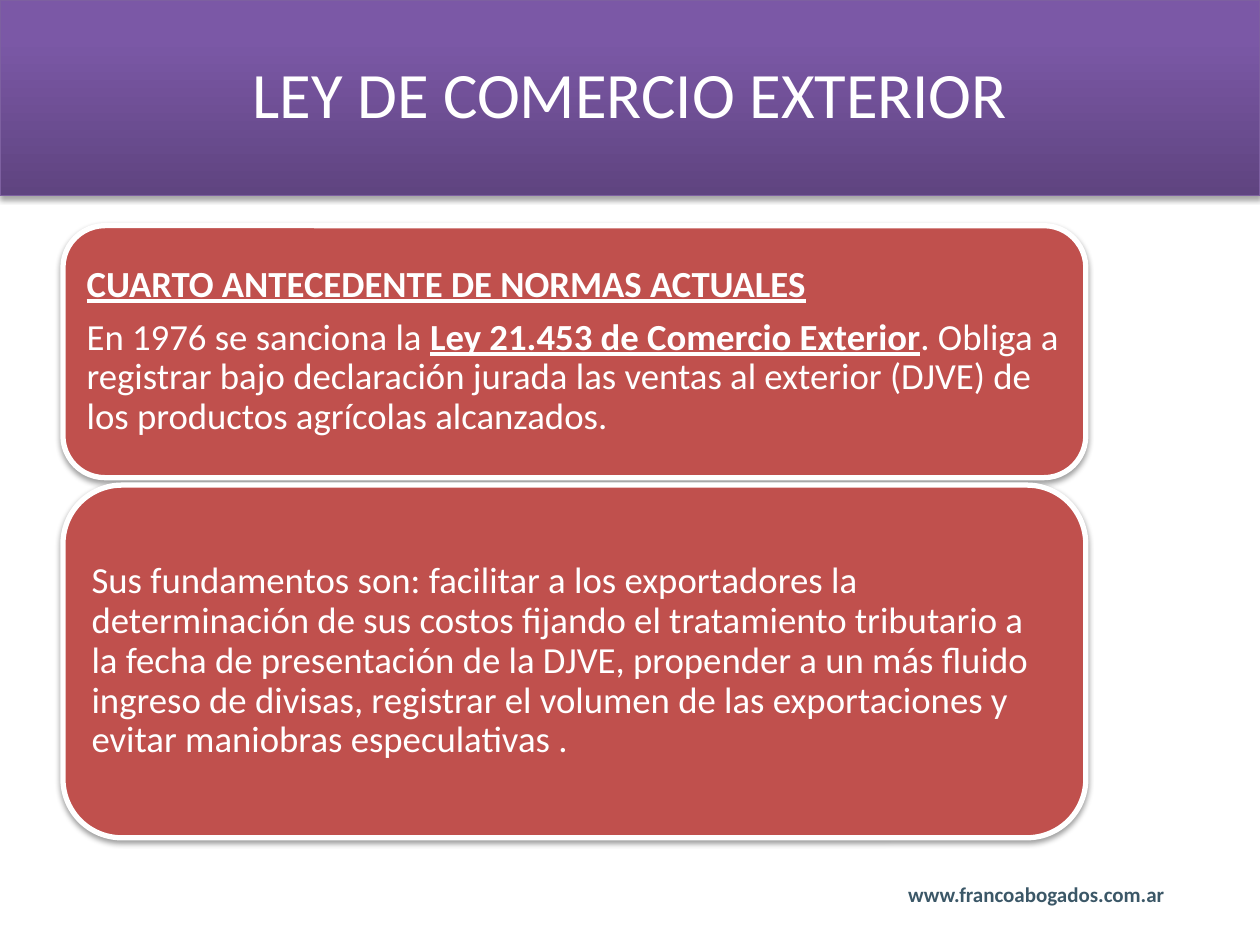
from copy import deepcopy
from dataclasses import dataclass

from lxml import etree
from pptx import Presentation
from pptx.dml.color import RGBColor
from pptx.enum import shapes, text
from pptx.oxml.ns import qn
from pptx.util import Cm, Pt

FONT = "Calibri"
COLORS = {
    "white": "FFFFFF",
    "black": "000000",
    "card": "C0504D",
    "banner_line": "7D60A0",
    "footer": "3B5767",
}
BANNER_STOPS = [(0, "5F4480"), (0.8, "7B58A6"), (1, "7C57A8")]
CARD_LEFT, CARD_WIDTH = 1.27, 20.62
CARD_INSET = Cm(0.23)


@dataclass(frozen=True)
class TextRun:
    content: str
    emphasis: bool = False


@dataclass(frozen=True)
class Card:
    top: float
    height: float
    paragraphs: list[list[TextRun]]


CARDS = [
    Card(4.55, 5.08, [
        [TextRun("CUARTO ANTECEDENTE DE NORMAS ACTUALES", True)],
        [
            TextRun("En 1976 se sanciona la "),
            TextRun("Ley 21.453 de Comercio Exterior", True),
            TextRun(". Obliga a registrar bajo declaración jurada las ventas al "
                    "exterior (DJVE) de los productos agrícolas alcanzados."),
        ],
    ]),
    Card(9.78, 7.11, [
        [TextRun("Sus fundamentos son: facilitar a los exportadores la determinación "
                 "de sus costos fijando el tratamiento tributario a la fecha de "
                 "presentación de la DJVE, propender a un más fluido ingreso de "
                 "divisas, registrar el volumen de las exportaciones y evitar "
                 "maniobras especulativas .")],
    ]),
]


def rgb(name: str) -> RGBColor:
    return RGBColor.from_string(COLORS[name])


def add_run(paragraph, content: str, size: float, color: str,
            bold: bool = False, underline: bool = False) -> None:
    run = paragraph.add_run()
    run.text = content
    run.font.name = FONT
    run.font.size = Pt(size)
    run.font.bold = bold
    run.font.underline = underline
    run.font.color.rgb = rgb(color)


def set_outline(shape, color: str, width: float) -> None:
    shape.line.color.rgb = rgb(color)
    shape.line.width = Pt(width)


def set_shadow(shape, distance: float, opacity: int) -> None:
    """Give the shape a soft shadow that falls straight down."""
    shape.shadow.inherit = False
    effects = shape._element.spPr.find(qn("a:effectLst"))
    shadow = etree.SubElement(
        effects, qn("a:outerShdw"), blurRad=str(Pt(3.1)), dist=str(Pt(distance)),
        dir="5400000", rotWithShape="0")
    color = etree.SubElement(shadow, qn("a:srgbClr"), val=COLORS["black"])
    etree.SubElement(color, qn("a:alpha"), val=str(opacity * 1000))


def set_banner_gradient(shape) -> None:
    shape.fill.gradient()
    shape.fill.gradient_angle = 90
    stop_list = shape._element.spPr.find(".//" + qn("a:gsLst"))
    stop_list.append(deepcopy(stop_list[-1]))
    for stop, (position, color) in zip(shape.fill.gradient_stops, BANNER_STOPS):
        stop.position = position
        stop.color.rgb = RGBColor.from_string(color)


def format_title(title, width: int) -> None:
    title.left, title.top, title.width, title.height = 0, 0, width, Cm(3.94)
    set_banner_gradient(title)
    set_outline(title, "banner_line", 0.75)
    set_shadow(title, 1.8, 35)
    frame = title.text_frame
    frame.auto_size = text.MSO_AUTO_SIZE.NONE
    frame.vertical_anchor = text.MSO_ANCHOR.MIDDLE
    paragraph = frame.paragraphs[0]
    paragraph.alignment = text.PP_ALIGN.CENTER
    paragraph.line_spacing = 0.9
    add_run(paragraph, "LEY DE COMERCIO EXTERIOR", 37, "white")


def add_card(slide, card: Card) -> None:
    shape = slide.shapes.add_shape(
        shapes.MSO_SHAPE.ROUNDED_RECTANGLE,
        Cm(CARD_LEFT), Cm(card.top), Cm(CARD_WIDTH), Cm(card.height))
    shape.fill.solid()
    shape.fill.fore_color.rgb = rgb("card")
    set_outline(shape, "white", 3)
    set_shadow(shape, 1.6, 38)
    frame = shape.text_frame
    frame.word_wrap = True
    frame.vertical_anchor = text.MSO_ANCHOR.MIDDLE
    frame.margin_left = frame.margin_right = CARD_INSET
    frame.margin_top = frame.margin_bottom = CARD_INSET
    for index, runs in enumerate(card.paragraphs):
        paragraph = frame.add_paragraph() if index else frame.paragraphs[0]
        paragraph.alignment = text.PP_ALIGN.LEFT
        paragraph.line_spacing = 0.9
        paragraph.space_after = Pt(7.35)
        for run in runs:
            add_run(paragraph, run.content, 21, "white", run.emphasis, run.emphasis)


def add_footer(slide) -> None:
    box = slide.shapes.add_textbox(Cm(18.06), Cm(17.65), Cm(6.05), Cm(0.76))
    box.text_frame.word_wrap = True
    add_run(box.text_frame.paragraphs[0], "www.francoabogados.com.ar", 12,
            "footer", bold=True)


def main() -> None:
    presentation = Presentation()
    presentation.slide_width, presentation.slide_height = Cm(25.4), Cm(19.05)
    slide = presentation.slides.add_slide(
        presentation.slide_layouts.get_by_name("Title Only"))
    format_title(slide.shapes.title, presentation.slide_width)
    for card in CARDS:
        add_card(slide, card)
    add_footer(slide)
    presentation.save("out.pptx")


if __name__ == "__main__":
    main()
